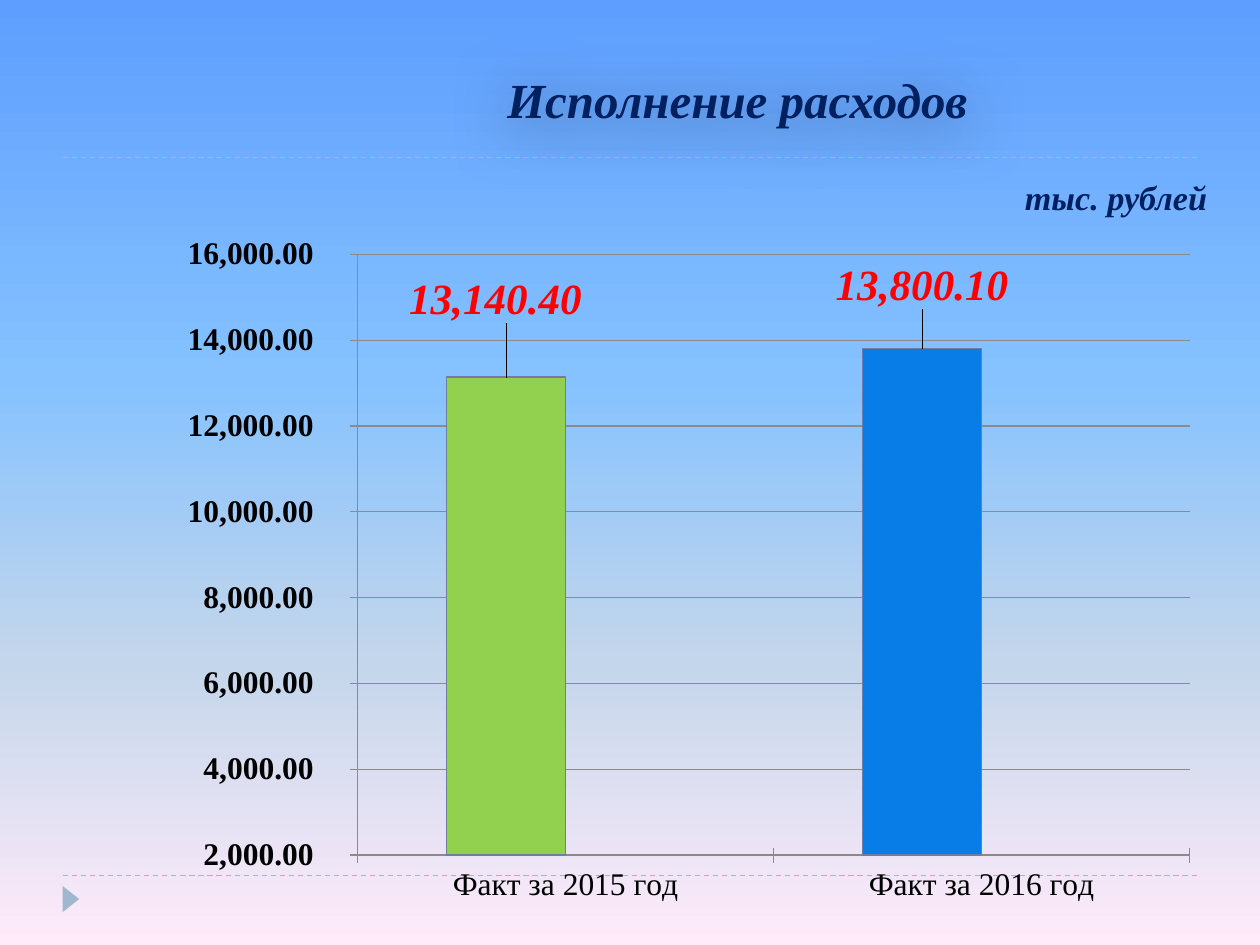
from lxml import etree
from pptx import Presentation
from pptx import util as u
from pptx.chart.data import CategoryChartData
from pptx.dml.color import RGBColor
from pptx.enum import chart as ch, dml, shapes, text
from pptx.oxml import parse_xml
from pptx.oxml.ns import qn

Pt = u.Pt
NS = 'xmlns:a="http://schemas.openxmlformats.org/drawingml/2006/main"'
NS_C = 'xmlns:c="http://schemas.openxmlformats.org/drawingml/2006/chart"'

# Content
TITLE = "Исполнение расходов "
UNITS = "тыс. рублей"
CATEGORIES = ["Факт за 2015 год", "Факт за 2016 год"]
SERIES = [("Series 1", [13140.4, 13800.1]), ("Series 2", [None, None])]
AXIS_FORMAT = ('_-* #,##0.00_р_._-;\\-* #,##0.00_р_._-;'
               '_-* "-"??_р_._-;_-@_-')
PLOT = {"x": 0.19, "y": 0.04, "w": 0.79, "h": 0.87}  # shares of the chart
LABEL_SHIFTS = [(-0.01, -0.07), (0, -0.05)]


class Theme:
    font = "Times New Roman"
    navy, red, black = "002060", "FF0000", "000000"
    rule, grid = "9FB8CD", "8B8B8B"
    series, bar_line = ["727CA3", "9FB8CD"], "727CA3"
    bars = ["92D050", "097DE7"]
    sky = [(0, "5E9EFF"), (40, "85C2FF"), (70, "C4D6EB"), (100, "FFEBFA")]
    title, units, axis, label = 28, 19.5, 18, 24.6


def rgb(value):
    return RGBColor.from_string(value)


def style(font, size, color, bold=False, italic=False):
    font.name, font.size = Theme.font, Pt(size)
    font.bold, font.italic = bold, italic
    font.color.rgb = rgb(color)


def add_text(s, box, words, size, anchor, align):
    sp = s.shapes.add_textbox(*map(Pt, box))
    tf = sp.text_frame
    tf.word_wrap, tf.vertical_anchor = True, anchor
    p = tf.paragraphs[0]
    p.text, p.alignment = words, align
    style(p.runs[0].font, size, Theme.navy, True, True)
    return sp


def add_background(s):
    s.background.fill.gradient()
    grad = s.element.find(".//" + qn("a:gradFill"))
    stops = "".join(f'<a:gs pos="{pos * 1000}"><a:srgbClr val="{color}"/></a:gs>'
                    for pos, color in Theme.sky)
    grad.getparent().replace(grad, parse_xml(
        f'<a:gradFill {NS} rotWithShape="1"><a:gsLst>{stops}</a:gsLst>'
        '<a:lin ang="5400000" scaled="0"/></a:gradFill>'))


def add_rule(s, y):
    line = s.shapes.add_connector(shapes.MSO_CONNECTOR.STRAIGHT,
                                  Pt(36), Pt(y), Pt(684), Pt(y))
    line.line.color.rgb, line.line.width = rgb(Theme.rule), Pt(0.75)
    line.line.dash_style = dml.MSO_LINE.DASH
    etree.SubElement(line.element.spPr, qn("a:effectLst"))


def add_chart(s):
    data = CategoryChartData(number_format="#,##0.00")
    data.categories = CATEGORIES
    for name, values in SERIES:
        data.add_series(name, values)
    chart = s.shapes.add_chart(ch.XL_CHART_TYPE.COLUMN_CLUSTERED, Pt(90), Pt(129.6),
                               Pt(601.9), Pt(394.6), data).chart
    chart.has_legend = chart.has_title = False
    style(chart.font, Theme.axis, Theme.black)

    # Axes and grid
    cat, val = chart.category_axis, chart.value_axis
    val.minimum_scale, val.maximum_scale, val.major_unit = 2000, 16000, 2000
    val.has_major_gridlines = True
    val.tick_labels.number_format = AXIS_FORMAT
    val.tick_labels.number_format_is_linked = False
    style(cat.tick_labels.font, Theme.axis, Theme.black)
    style(val.tick_labels.font, Theme.axis, Theme.black, True)
    for axis in (cat, val):
        axis.major_tick_mark = ch.XL_TICK_MARK.CROSS
    for part in (cat, val, val.major_gridlines):
        part.format.line.color.rgb = rgb(Theme.grid)
        part.format.line.width = Pt(0.75)

    # Bars
    plot = chart.plots[0]
    plot.vary_by_categories, plot.gap_width, plot.overlap = False, 150, 0
    for series, color in zip(plot.series, Theme.series):
        series.format.fill.solid()
        series.format.fill.fore_color.rgb = rgb(color)
    facts = plot.series[0]
    for i, color in enumerate(Theme.bars):
        fmt = facts.points[i].format
        fmt.fill.solid()
        fmt.fill.fore_color.rgb = rgb(color)
        fmt.line.color.rgb, fmt.line.width = rgb(Theme.bar_line), Pt(0.75)

    # Value labels, each moved away from its bar
    labels = facts.data_labels
    labels.show_value, labels.position = True, ch.XL_LABEL_POSITION.OUTSIDE_END
    labels.number_format, labels.number_format_is_linked = "#,##0.00", False
    style(labels.font, Theme.label, Theme.red, True, True)
    for i, (dx, dy) in enumerate(LABEL_SHIFTS):
        label = facts.points[i].data_label
        style(label.font, Theme.label, Theme.red, True, True)
        label.position = ch.XL_LABEL_POSITION.OUTSIDE_END
    for node, (dx, dy) in zip(chart.element.iter(qn("c:dLbl")), LABEL_SHIFTS):
        node.find(qn("c:idx")).addnext(parse_xml(
            f'<c:layout {NS_C}><c:manualLayout><c:x val="{dx}"/><c:y val="{dy}"/>'
            '</c:manualLayout></c:layout>'))

    # Fixed plot area
    area = chart.element.find(".//" + qn("c:plotArea"))
    for old in area.findall(qn("c:layout")):
        area.remove(old)
    sizes = "".join(f'<c:{key} val="{share}"/>' for key, share in PLOT.items())
    area.insert(0, parse_xml(
        f'<c:layout {NS_C}><c:manualLayout><c:layoutTarget val="inner"/>'
        f'<c:xMode val="edge"/><c:yMode val="edge"/>{sizes}'
        '</c:manualLayout></c:layout>'))


def main():
    prs = Presentation()
    prs.slide_width, prs.slide_height = Pt(720), Pt(540)
    s = prs.slides.add_slide(prs.slide_layouts[6])
    add_background(s)

    # Rules and corner marker
    for y in (500.4, 90):
        add_rule(s, y)
    sp = s.shapes.add_shape(shapes.MSO_SHAPE.ISOSCELES_TRIANGLE,
                            Pt(33), Pt(509), Pt(15), Pt(9.5))
    sp.rotation, sp.shadow.inherit = 90, False
    sp.fill.solid()
    sp.fill.fore_color.rgb = rgb(Theme.rule)
    sp.line.fill.background()

    # Title with a soft shadow
    sp = add_text(s, (129.6, 22.3, 590.4, 54.7), TITLE, Theme.title,
                  text.MSO_ANCHOR.BOTTOM, text.PP_ALIGN.CENTER)
    sp.element.spPr.append(parse_xml(
        f'<a:effectLst {NS}><a:outerShdw blurRad="{Pt(35)}" dist="{Pt(4)}" '
        'dir="5400000" algn="t" rotWithShape="0"><a:srgbClr val="000000">'
        '<a:alpha val="50000"/></a:srgbClr></a:outerShdw></a:effectLst>'))

    add_chart(s)
    add_text(s, (568, 95.8, 129, 33.8), UNITS, Theme.units,
             text.MSO_ANCHOR.MIDDLE, text.PP_ALIGN.RIGHT)
    prs.save("out.pptx")


if __name__ == "__main__":
    main()
